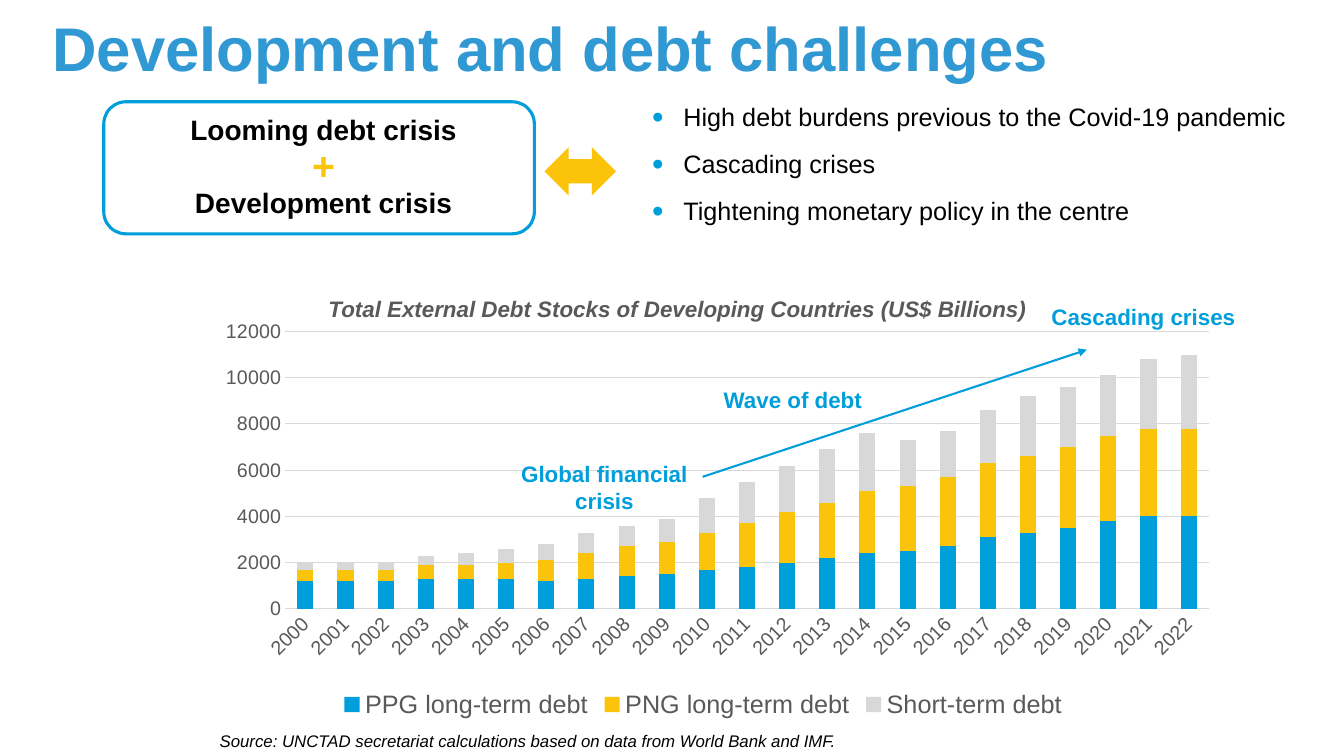
from lxml import etree
from pptx import Presentation
from pptx.chart.data import CategoryChartData
from pptx.dml.color import RGBColor
from pptx.enum.chart import XL_CHART_TYPE, XL_LEGEND_POSITION, XL_TICK_MARK
from pptx.enum.shapes import MSO_CONNECTOR, MSO_SHAPE
from pptx.enum.text import MSO_ANCHOR, PP_ALIGN
from pptx.oxml import parse_xml
from pptx.oxml.ns import nsdecls, qn
from pptx.util import Inches, Pt

STACKED = XL_CHART_TYPE.COLUMN_STACKED
LEGEND_BOTTOM = XL_LEGEND_POSITION.BOTTOM
NO_TICK = XL_TICK_MARK.NONE
STRAIGHT = MSO_CONNECTOR.STRAIGHT
ROUNDED, DOUBLE_ARROW = MSO_SHAPE.ROUNDED_RECTANGLE, MSO_SHAPE.LEFT_RIGHT_ARROW
TOP, MIDDLE = MSO_ANCHOR.TOP, MSO_ANCHOR.MIDDLE
LEFT, CENTER = PP_ALIGN.LEFT, PP_ALIGN.CENTER

FONT = "Arial"
COLORS = {
    "title": "3098D2", "blue": "009EDB", "yellow": "FCC30B", "short": "D8D8D8",
    "grid": "D9D9D9", "grey": "595959", "black": "000000",
}
YEARS = [str(year) for year in range(2000, 2023)]
DEBT = [
    ("PPG long-term debt", "blue",
     [1200, 1200, 1200, 1300, 1300, 1300, 1200, 1300, 1400, 1500, 1700, 1800,
      2000, 2200, 2400, 2500, 2700, 3100, 3300, 3500, 3800, 4000, 4000]),
    ("PNG long-term debt", "yellow",
     [500, 500, 500, 600, 600, 700, 900, 1100, 1300, 1400, 1600, 1900,
      2200, 2400, 2700, 2800, 3000, 3200, 3300, 3500, 3700, 3800, 3800]),
    ("Short-term debt", "short",
     [300, 300, 300, 400, 500, 600, 700, 900, 900, 1000, 1500, 1800,
      2000, 2300, 2500, 2000, 2000, 2300, 2600, 2600, 2600, 3000, 3200]),
]
PLOT_AREA = {"x": 0.09, "y": 0.037, "w": 0.906, "h": 0.681}
CRISES = [("Looming debt crisis", 20, "black"), ("+", 28, "yellow"),
          ("Development crisis", 20, "black")]
DRIVERS = ["High debt burdens previous to the Covid-19 pandemic",
           "Cascading crises", "Tightening monetary policy in the centre"]


def rgb(name):
    """Return the named colour."""
    return RGBColor.from_string(COLORS[name])


def style_font(font, size, color, bold=False, italic=False):
    """Set face, size, colour and weight of a font."""
    font.name, font.size = FONT, Pt(size)
    font.bold, font.italic = bold, italic
    font.color.rgb = rgb(color)


def add_run(paragraph, text, size, color, bold=False, italic=False):
    """Append a formatted run to a paragraph."""
    run = paragraph.add_run()
    run.text = text
    style_font(run.font, size, color, bold, italic)


def place(shape, box):
    """Move and size a shape in inches."""
    shape.left, shape.top, shape.width, shape.height = map(Inches, box)


def add_frame(slide, box, anchor=TOP):
    """Add a wrapping text box and return its text frame."""
    frame = slide.shapes.add_textbox(*map(Inches, box)).text_frame
    frame.word_wrap = True
    frame.vertical_anchor = anchor
    return frame


def add_label(slide, box, text, size, color, bold=False, italic=False, align=LEFT):
    """Add a one-paragraph text box."""
    paragraph = add_frame(slide, box).paragraphs[0]
    paragraph.alignment = align
    add_run(paragraph, text, size, color, bold, italic)


def add_panel(slide, preset, box, fill=None, line=None):
    """Add a preset shape with a plain fill or outline."""
    panel = slide.shapes.add_shape(preset, *map(Inches, box))
    panel.shadow.inherit = False
    if fill:
        panel.fill.solid()
        panel.fill.fore_color.rgb = rgb(fill)
    else:
        panel.fill.background()
    if line:
        panel.line.color.rgb = rgb(line)
        panel.line.width = Pt(2.25)
    else:
        panel.line.fill.background()


def add_title(slide):
    """Fill and format the slide title."""
    title = slide.shapes.title
    place(title, (0.42, 0.02, 12.42, 0.99))
    frame = title.text_frame
    frame.vertical_anchor = MIDDLE
    frame.margin_top = frame.margin_bottom = Inches(0.1)
    paragraph = frame.paragraphs[0]
    paragraph.alignment, paragraph.line_spacing = LEFT, 0.9
    add_run(paragraph, "Development and debt challenges", 44, "title", bold=True)


def next_paragraph(frame, index):
    """Return the first paragraph for index 0, otherwise a new one."""
    return frame.add_paragraph() if index else frame.paragraphs[0]


def add_crises(slide):
    """Add the framed pair of crises."""
    add_panel(slide, ROUNDED, (1.03, 1.01, 4.27, 1.31), line="blue")
    frame = add_frame(slide, (0.95, 1.08, 4.35, 1.17), MIDDLE)
    frame.margin_top = frame.margin_bottom = Inches(0.1)
    for index, (text, size, color) in enumerate(CRISES):
        paragraph = next_paragraph(frame, index)
        paragraph.alignment, paragraph.line_spacing = CENTER, 0.9
        paragraph._p.get_or_add_pPr().set("marL", str(Inches(0.17)))
        add_run(paragraph, text, size, color, bold=True)


def add_drivers(slide):
    """Add the bulleted list of drivers."""
    frame = add_frame(slide, (6.21, 0.96, 6.79, 1.35))
    for index, text in enumerate(DRIVERS):
        paragraph = next_paragraph(frame, index)
        paragraph.space_after = Pt(12)
        props = paragraph._p.get_or_add_pPr()
        props.set("marL", str(Inches(0.47)))
        props.set("indent", str(Inches(-0.31)))
        color = etree.SubElement(props, qn("a:buClr"))
        etree.SubElement(color, qn("a:srgbClr"), val=COLORS["blue"])
        etree.SubElement(props, qn("a:buSzPct"), val="130000")
        etree.SubElement(props, qn("a:buFont"), typeface=FONT)
        etree.SubElement(props, qn("a:buChar"), char="•")
        add_run(paragraph, text, 18, "black")


def style_axis(axis):
    """Set label font and remove tick marks."""
    axis.major_tick_mark = axis.minor_tick_mark = NO_TICK
    style_font(axis.tick_labels.font, 14, "grey")


def set_plot_area(chart):
    """Fix the inner plot area as fractions of the chart."""
    plot_area = chart._chartSpace.chart.plotArea
    for old in plot_area.findall(qn("c:layout")):
        plot_area.remove(old)
    sizes = "".join(f'<c:{key} val="{value}"/>' for key, value in PLOT_AREA.items())
    plot_area.insert(0, parse_xml(
        f'<c:layout {nsdecls("c")}><c:manualLayout><c:layoutTarget val="inner"/>'
        f'<c:xMode val="edge"/><c:yMode val="edge"/>{sizes}'
        "</c:manualLayout></c:layout>"))


def add_debt_chart(slide):
    """Add the stacked columns of external debt."""
    data = CategoryChartData(number_format="0")
    data.categories = YEARS
    for name, _, values in DEBT:
        data.add_series(name, values)
    box = map(Inches, (1.92, 3.14, 10.11, 4.04))
    chart = slide.shapes.add_chart(STACKED, *box, data).chart
    style_font(chart.font, 14, "black")
    chart.has_title = False
    chart.has_legend = True
    chart.legend.position = LEGEND_BOTTOM
    chart.legend.include_in_layout = False
    style_font(chart.legend.font, 18, "grey")
    plot = chart.plots[0]
    plot.gap_width, plot.overlap, plot.vary_by_categories = 150, 100, False
    for series, (_, color, _) in zip(plot.series, DEBT):
        series.format.fill.solid()
        series.format.fill.fore_color.rgb = rgb(color)
    years, amounts = chart.category_axis, chart.value_axis
    style_axis(years)
    style_axis(amounts)
    years._element.find(qn("c:txPr")).find(qn("a:bodyPr")).set("rot", "-2700000")
    amounts.minimum_scale, amounts.maximum_scale, amounts.major_unit = 0, 12000, 2000
    amounts.format.line.fill.background()
    for line in (years.format.line, amounts.major_gridlines.format.line):
        line.color.rgb = rgb("grid")
        line.width = Pt(0.75)
    set_plot_area(chart)


def add_trend_arrow(slide):
    """Add the rising arrow over the columns."""
    ends = map(Inches, (6.97, 4.73, 10.78, 3.47))
    arrow = slide.shapes.add_connector(STRAIGHT, *ends)
    arrow.line.color.rgb = rgb("blue")
    arrow.line.width = Pt(1.5)
    etree.SubElement(arrow.line._get_or_add_ln(), qn("a:tailEnd"), type="triangle")
    etree.SubElement(arrow._element.spPr, qn("a:effectLst"))


def main():
    """Build and save the slide."""
    deck = Presentation()
    deck.slide_width, deck.slide_height = Inches(13.33), Inches(7.5)
    slide = deck.slides.add_slide(deck.slide_layouts[5])
    add_title(slide)
    add_crises(slide)
    add_drivers(slide)
    add_panel(slide, DOUBLE_ARROW, (5.4, 1.46, 0.71, 0.48), fill="yellow")
    add_label(slide, (3.16, 2.88, 7.27, 0.37),
              "Total External Debt Stocks of Developing Countries (US$ Billions)",
              16, "grey", bold=True, italic=True)
    add_label(slide, (2.08, 7.2, 8.85, 0.3),
              "Source: UNCTAD secretariat calculations based on data from World Bank and IMF.",
              12, "black", italic=True)
    add_debt_chart(slide)
    add_trend_arrow(slide)
    add_label(slide, (7.08, 3.78, 2.17, 0.37), "Wave of debt", 16, "blue", bold=True)
    for text, box in (("Cascading crises", (10.33, 2.96, 2.02, 0.64)),
                      ("Global financial crisis", (5.01, 4.52, 1.97, 0.64))):
        add_label(slide, box, text, 16, "blue", bold=True, align=CENTER)
    deck.save("out.pptx")


if __name__ == "__main__":
    main()
